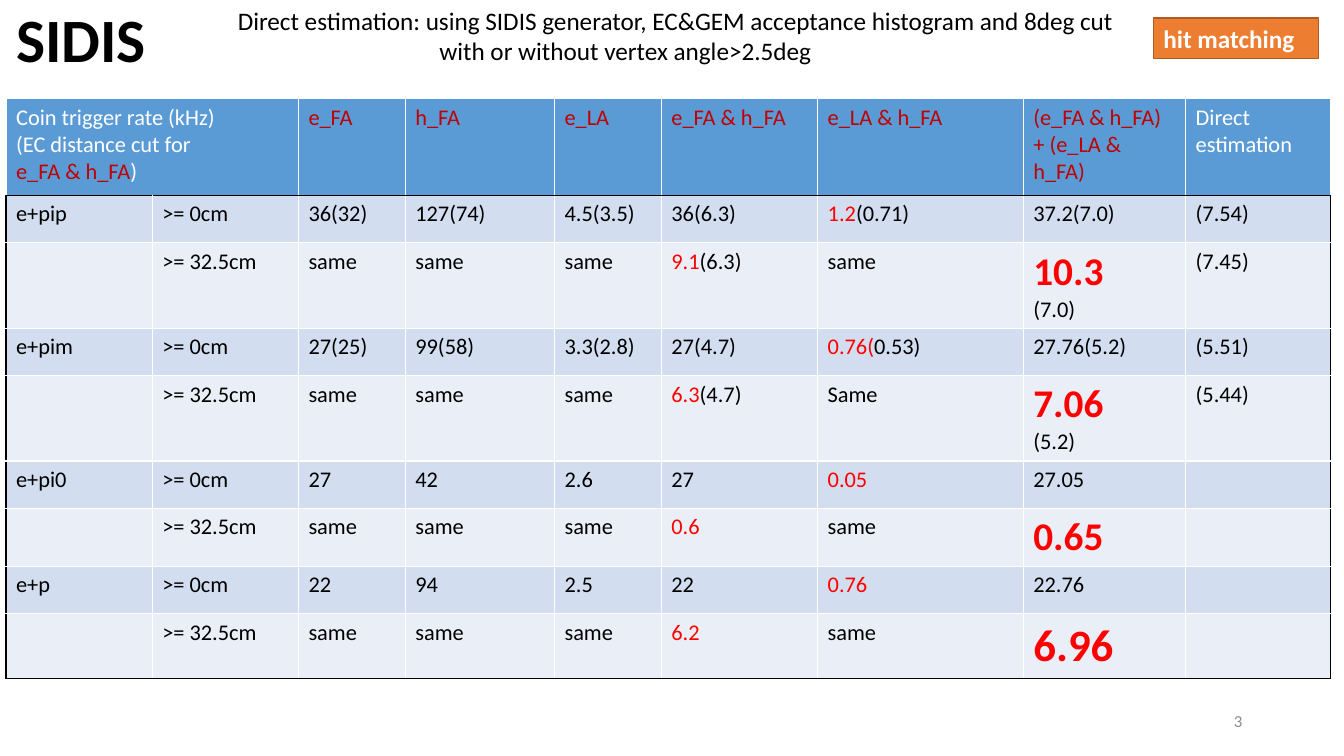
from dataclasses import dataclass
from typing import Optional

from lxml.etree import SubElement
from pptx import Presentation
from pptx.dml.color import RGBColor
from pptx.enum.shapes import MSO_SHAPE
from pptx.enum.text import MSO_ANCHOR, MSO_AUTO_SIZE, PP_ALIGN
from pptx.oxml.ns import qn
from pptx.util import Inches, Pt


@dataclass(frozen=True)
class Theme:
    font: str = "Calibri"
    black: str = "000000"
    white: str = "FFFFFF"
    red: str = "FF0000"
    dark_red: str = "C00000"
    grey: str = "8C8C8C"
    header: str = "5B9BD5"
    band_dark: str = "D2DEEF"
    band_light: str = "EAEFF7"
    badge: str = "ED7D31"
    badge_line: str = "AF5C24"
    title_size: int = 44
    text_size: int = 18
    cell_size: int = 16
    total_size: int = 28
    last_total_size: int = 32
    number_size: int = 12


THEME = Theme()


@dataclass(frozen=True)
class Run:
    text: str
    color: Optional[str] = None


@dataclass(frozen=True)
class Total:
    text: str
    size: int = THEME.total_size


def red(text):
    return Run(text, THEME.red)


def dark_red(text):
    return Run(text, THEME.dark_red)


# A cell is one line or a list of lines; a line is one piece or a tuple of runs.
HEADER = [
    ["Coin trigger rate (kHz)", "(EC distance cut for", (dark_red("e_FA & h_FA"), Run(")"))],
    "",
    *map(dark_red, ["e_FA", "h_FA", "e_LA", "e_FA & h_FA", "e_LA & h_FA",
                    "(e_FA & h_FA) + (e_LA & h_FA)"]),
    "Direct estimation",
]
NO_CUT, CUT = ">= 0cm", ">= 32.5cm"
SAME = ["same"] * 3
RATES = [
    ["e+pip", NO_CUT, "36(32)", "127(74)", "4.5(3.5)", "36(6.3)",
     (red("1.2"), Run("(0.71)")), "37.2(7.0)", "(7.54)"],
    ["", CUT, *SAME, (red("9.1"), Run("(6.3)")), "same", [Total("10.3"), "(7.0)"], "(7.45)"],
    ["e+pim", NO_CUT, "27(25)", "99(58)", "3.3(2.8)", "27(4.7)",
     (red("0.76("), Run("0.53)")), "27.76(5.2)", "(5.51)"],
    ["", CUT, *SAME, (red("6.3"), Run("(4.7)")), "Same", [Total("7.06"), "(5.2)"], "(5.44)"],
    ["e+pi0", NO_CUT, "27", "42", "2.6", "27", red("0.05"), "27.05", ""],
    ["", CUT, *SAME, red("0.6"), "same", Total("0.65"), ""],
    ["e+p", NO_CUT, "22", "94", "2.5", "22", red("0.76"), "22.76", ""],
    ["", CUT, *SAME, red("6.2"), "same", Total("6.96", THEME.last_total_size), ""],
]
COLUMN_WIDTHS = [1.45, 1.45, 1.06, 1.48, 1.06, 1.55, 2.04, 1.61, 1.44]
ROW_HEIGHTS = [0.96, 0.47, 0.84, 0.47, 0.84, 0.47, 0.56, 0.47, 0.64]


class SlideBuilder:
    def __init__(self, slide, theme):
        self.slide = slide
        self.theme = theme

    def style(self, font, size, color, bold=False):
        font.name = self.theme.font
        font.size = Pt(size)
        font.bold = bold
        font.color.rgb = RGBColor.from_string(color)

    def title(self, text, box):
        title = self.slide.shapes.title
        title.left, title.top, title.width, title.height = map(Inches, box)
        frame = title.text_frame
        frame.text = text
        frame.auto_size = MSO_AUTO_SIZE.NONE
        frame.vertical_anchor = MSO_ANCHOR.MIDDLE
        heading = frame.paragraphs[0]
        heading.alignment = PP_ALIGN.LEFT
        heading.line_spacing = 0.9
        self.style(heading.font, self.theme.title_size, self.theme.black, True)

    def text(self, lines, box, size, color, align=PP_ALIGN.LEFT, anchor=MSO_ANCHOR.TOP):
        """Lines are pairs of text and left indent in inches."""
        frame = self.slide.shapes.add_textbox(*map(Inches, box)).text_frame
        frame.word_wrap = True
        frame.vertical_anchor = anchor
        for index, (text, indent) in enumerate(lines):
            line = frame.add_paragraph() if index else frame.paragraphs[0]
            line.text = text
            line.alignment = align
            self.style(line.font, size, color)
            if indent:
                line._p.get_or_add_pPr().set("marL", str(Inches(indent)))

    def badge(self, text, box):
        badge = self.slide.shapes.add_shape(MSO_SHAPE.RECTANGLE, *map(Inches, box))
        badge.shadow.inherit = False
        badge.fill.solid()
        badge.fill.fore_color.rgb = RGBColor.from_string(self.theme.badge)
        badge.line.color.rgb = RGBColor.from_string(self.theme.badge_line)
        badge.line.width = Pt(1)
        badge.text_frame.text = text
        badge.text_frame.vertical_anchor = MSO_ANCHOR.TOP
        label = badge.text_frame.paragraphs[0]
        label.alignment = PP_ALIGN.LEFT
        self.style(label.font, self.theme.text_size, self.theme.white, True)

    def table(self, rows, left, top, widths, heights):
        frame = self.slide.shapes.add_table(
            len(rows), len(widths), Inches(left), Inches(top),
            Inches(sum(widths)), Inches(sum(heights)))
        table = frame.table
        for column, width in zip(table.columns, widths):
            column.width = Inches(width)
        for row, height in zip(table.rows, heights):
            row.height = Inches(height)
        last_row, last_column = len(rows) - 1, len(widths) - 1
        bands = self.theme.band_light, self.theme.band_dark
        for r, row in enumerate(rows):
            for c, content in enumerate(row):
                cell = table.cell(r, c)
                self.borders(cell, {
                    "lnL": r > 0 and c == 0,
                    "lnR": r > 0 and c == last_column,
                    "lnT": r == 1,
                    "lnB": r in (0, last_row),
                })
                cell.fill.solid()
                fill = bands[r % 2] if r else self.theme.header
                cell.fill.fore_color.rgb = RGBColor.from_string(fill)
                self.cell_text(cell, content, self.theme.black if r else self.theme.white)
        table.cell(0, 0).merge(table.cell(0, 1))

    def borders(self, cell, dark_edges):
        properties = cell._tc.get_or_add_tcPr()
        for edge, dark in dark_edges.items():
            line = SubElement(properties, qn(f"a:{edge}"), w=str(Pt(1)))
            fill = SubElement(line, qn("a:solidFill"))
            SubElement(fill, qn("a:srgbClr"), val=self.theme.black if dark else self.theme.white)

    def cell_text(self, cell, content, color):
        size = self.theme.cell_size
        for index, line in enumerate(content if isinstance(content, list) else [content]):
            frame = cell.text_frame
            paragraph = frame.add_paragraph() if index else frame.paragraphs[0]
            if isinstance(line, Total):
                paragraph.text = line.text
                self.style(paragraph.font, line.size, self.theme.red, True)
            elif isinstance(line, tuple):
                for piece in line:
                    run = paragraph.add_run()
                    run.text = piece.text
                    self.style(run.font, size, piece.color or color)
            else:
                piece = line if isinstance(line, Run) else Run(line)
                paragraph.text = piece.text
                self.style(paragraph.font, size, piece.color or color)


def main():
    deck = Presentation()
    deck.slide_width, deck.slide_height = Inches(13.33), Inches(7.5)
    title_only = deck.slide_layouts[5]
    builder = SlideBuilder(deck.slides.add_slide(title_only), THEME)
    builder.title("SIDIS", (0.06, -0.13, 11.5, 1.11))
    builder.table([HEADER, *RATES], 0.06, 0.98, COLUMN_WIDTHS, ROW_HEIGHTS)
    builder.text(
        [("Direct estimation: using SIDIS generator, EC&GEM acceptance histogram and 8deg cut", 0),
         ("with or without vertex angle>2.5deg", 2)],
        (2.26, 0, 9.11, 0.71), THEME.text_size, THEME.black)
    builder.badge("hit matching", (11.44, 0.18, 1.64, 0.4))
    builder.text([("3", 0)], (9.42, 6.95, 3, 0.4), THEME.number_size, THEME.grey,
                 PP_ALIGN.RIGHT, MSO_ANCHOR.MIDDLE)
    deck.save("out.pptx")


if __name__ == "__main__":
    main()
